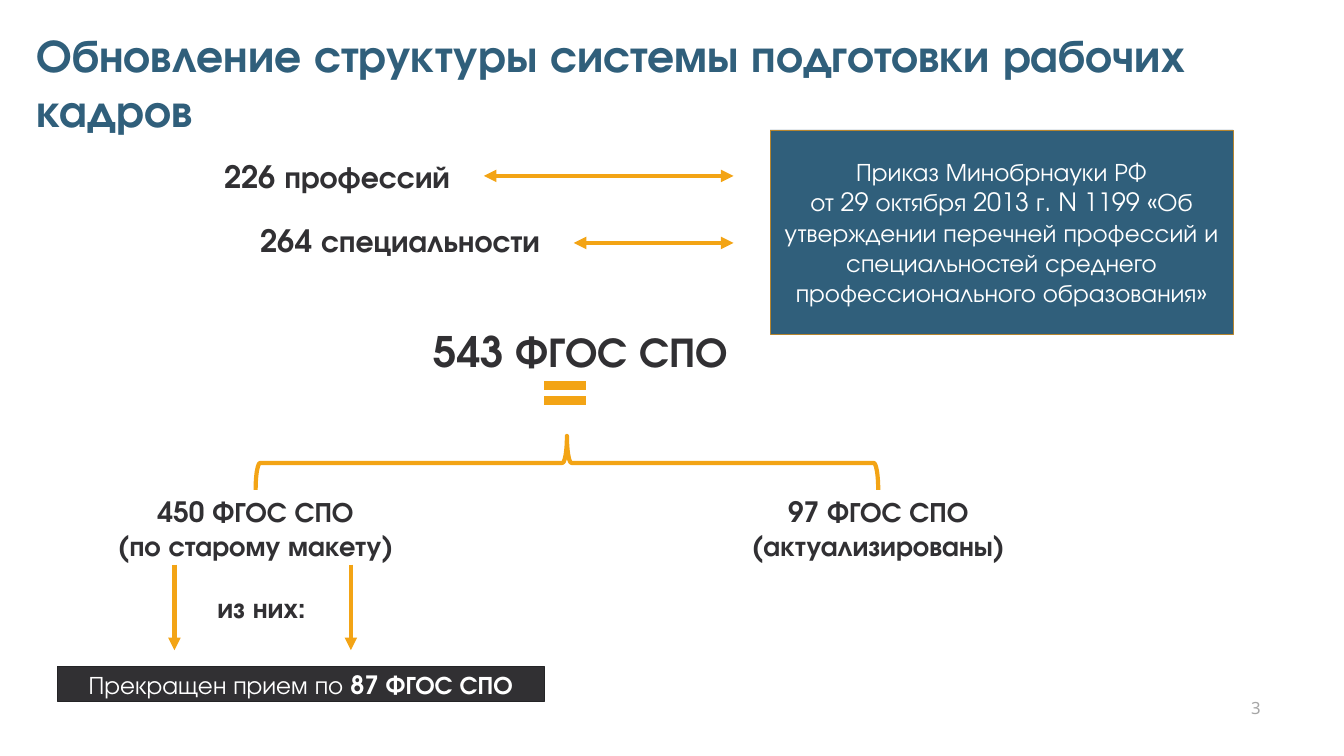
from collections import namedtuple

from lxml.etree import SubElement
from pptx import Presentation
from pptx.dml.color import RGBColor
from pptx.enum.shapes import MSO_CONNECTOR as Link, MSO_SHAPE as Preset
from pptx.enum.text import MSO_ANCHOR as Anchor, PP_ALIGN as Align
from pptx.oxml.ns import qn
from pptx.util import Cm, Pt

Box = namedtuple("Box", "left top width height")
FONT = "TeX Gyre Adventor"
BLUE, ORANGE, DARK, WHITE = "305F7B", "F3A415", "313033", "FFFFFF"


def color(value):
    """Turn a hex string into a colour."""
    return RGBColor.from_string(value)


def lengths(box):
    """Give the four sides of a box as lengths."""
    return [Cm(side) for side in box]


def fill_text(shape, lines, size, ink, align=Align.CENTER, bold=True,
              anchor=Anchor.MIDDLE, font=FONT):
    """Write one paragraph per line into a shape."""
    frame = shape.text_frame
    frame.word_wrap = True
    frame.vertical_anchor = anchor
    frame.text = "\n".join(lines)
    for para in frame.paragraphs:
        para.alignment = align
        para.font.name = font
        para.font.size = Pt(size)
        para.font.bold = bold
        para.font.color.rgb = color(ink)


def add_label(page, box, lines, size, ink=DARK, **style):
    """Add a text box."""
    label = page.shapes.add_textbox(*lengths(box))
    fill_text(label, lines, size, ink, **style)


def add_panel(page, box, fill, border, lines):
    """Add a filled rectangle with text."""
    panel = page.shapes.add_shape(Preset.RECTANGLE, *lengths(box))
    panel.shadow.inherit = False
    panel.fill.solid()
    panel.fill.fore_color.rgb = color(fill)
    panel.line.color.rgb = color(border)
    panel.line.width = Pt(1)
    fill_text(panel, lines, 36, WHITE, bold=False)
    return panel


def add_line(shapes, start, end, width=6, heads=()):
    """Add a straight orange line with triangles at the named ends."""
    points = [Cm(value) for value in (*start, *end)]
    line = shapes.add_connector(Link.STRAIGHT, *points)
    line.line.color.rgb = color(ORANGE)
    line.line.width = Pt(width)
    outline = line.line._get_or_add_ln()
    for head in heads:
        SubElement(outline, qn(f"a:{head}"), type="triangle")
    SubElement(line._element.spPr, qn("a:effectLst"))


def add_count(page, box, text, arrow_start, arrow_drop):
    """Add a right-aligned count and the two-way arrow up to the box edge."""
    height = 2.13
    width = arrow_start - 1.45
    add_label(page, Box(box.left, box.top, width, height), [text], 44, align=Align.RIGHT)
    level = box.top + height / 2 + arrow_drop
    add_line(page.shapes, (box.left + arrow_start, level), (box.left + box.width, level),
             heads=("headEnd", "tailEnd"))


def add_order(page, box):
    """Add the panel that names the ministry order."""
    add_panel(page, box, BLUE, "B5852F", [
        "Приказ Минобрнауки РФ",
        "от 29 октября 2013 г. N 1199 «Об утверждении перечней профессий "
        "и специальностей среднего профессионального образования»"])


def add_total(page, box):
    """Add the total with an equals sign and a brace below it."""
    total = Box(box.left + 4.7, box.top, 19.35, 2.82)
    add_label(page, total, ["543 ФГОС СПО"], 60, align=Align.RIGHT)
    middle = box.left + box.width / 2
    sign = page.shapes.add_group_shape()
    for drop in (3.17, 3.93):
        level = box.top + drop
        add_line(sign.shapes, (middle - 1.15, level), (middle + 0.98, level), 13)
    depth = 2.72
    center = box.top + box.height - depth / 2
    upright = Box(middle - depth / 2, center - box.width / 2, depth, box.width)
    brace = page.shapes.add_shape(Preset.LEFT_BRACE, *lengths(upright))
    brace.rotation = 90
    brace.shadow.inherit = False
    brace.fill.background()
    brace.line.color.rgb = color(ORANGE)
    brace.line.width = Pt(6)


def add_old_layout(page, box):
    """Add the old standards, the arrows down and the closing bar."""
    heading = Box(box.left + 1.42, box.top, 17.12, 3.68)
    add_label(page, heading, ["450 ФГОС СПО", "(по старому макету)"], 40)
    for shift in (5.89, 14.78):
        x = box.left + shift
        add_line(page.shapes, (x, box.top + 3.66), (x, box.top + 7.98), heads=("tailEnd",))
    add_label(page, Box(box.left + 6.65, box.top + 4.83, 7.26, 1.96), ["из них:"], 40)
    height = 1.75
    bar = add_panel(page, Box(box.left, box.top + box.height - height, box.width, height),
                    DARK, "242426", ["Прекращен прием по "])
    span = bar.text_frame.paragraphs[0].add_run()
    span.text = "87 ФГОС СПО"
    span.font.bold = True


def main():
    """Build the slide and save it."""
    deck = Presentation()
    deck.slide_width, deck.slide_height = Cm(67.72), Cm(38.1)
    page = deck.slides.add_slide(deck.slide_layouts[6])
    add_label(page, Box(61.78, 35.03, 2, 1.27), ["3"], 24, "A6A6A6", align=Align.RIGHT,
              bold=False, anchor=Anchor.BOTTOM, font="Noto Sans")
    add_label(page, Box(1.6, 1.19, 63.4, 5.89),
              ["Обновление структуры системы подготовки рабочих кадров"], 66, BLUE,
              align=Align.LEFT, anchor=Anchor.TOP)
    add_order(page, Box(38.81, 6.55, 23.32, 10.29))
    add_count(page, Box(9.96, 7.8, 27, 2.13), "226 профессий", 14.42, 0)
    add_count(page, Box(11.48, 11.05, 25.48, 2.13), "264 специальности", 17.43, 0.13)
    add_total(page, Box(12.88, 16.26, 31.37, 8.43))
    add_old_layout(page, Box(2.9, 24.79, 24.51, 10.56))
    add_label(page, Box(31.78, 24.79, 24.94, 3.68), ["97 ФГОС СПО", "(актуализированы)"], 40)
    deck.save("out.pptx")


if __name__ == "__main__":
    main()
